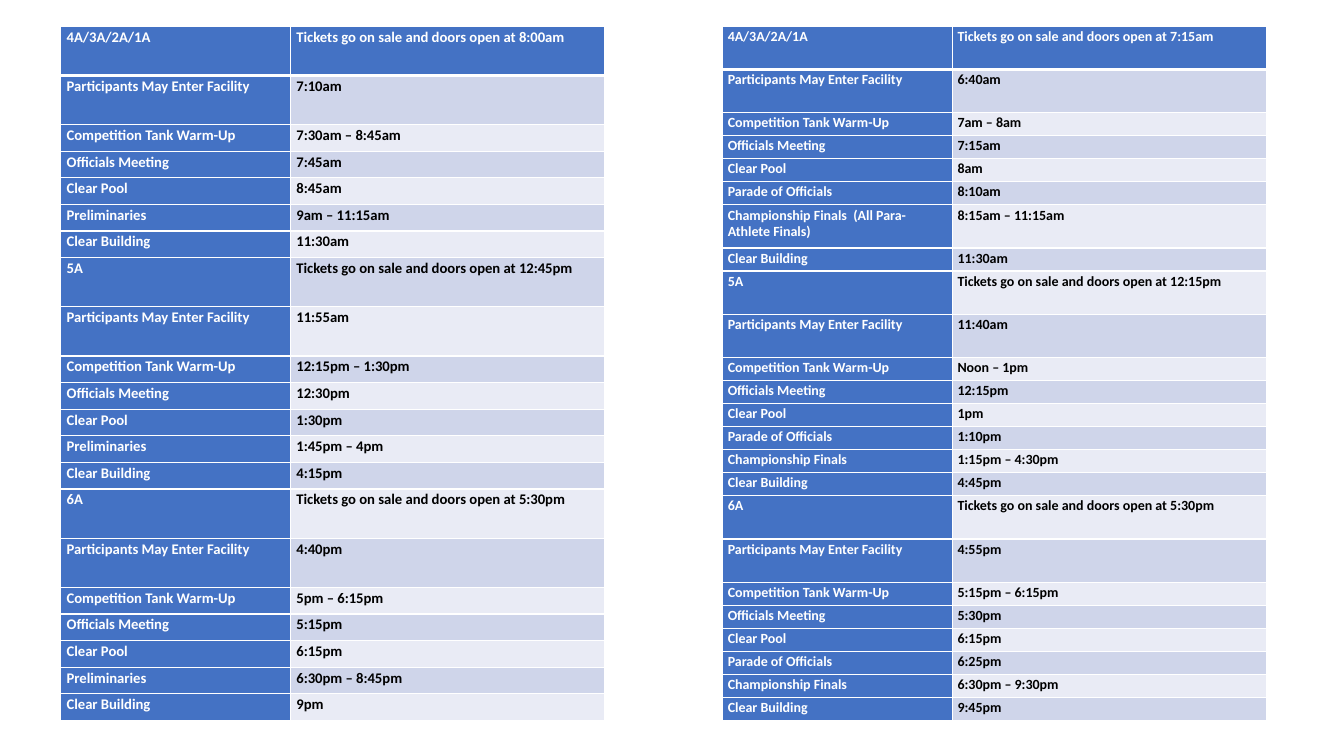
"""Build a slide with two swim meet schedules set side by side as tables."""
from dataclasses import dataclass

from lxml import etree
from pptx import Presentation
from pptx.dml.color import RGBColor
from pptx.enum.text import MSO_ANCHOR
from pptx.oxml.ns import qn
from pptx.slide import Slide
from pptx.table import _Cell
from pptx.util import Cm, Pt

ANCHOR_TOP = MSO_ANCHOR.TOP
BLANK_LAYOUT = 6
ENTRY = "Participants May Enter Facility"
TICKETS = "Tickets go on sale and doors open at "
FINALS = "Championship Finals"
OPENING_STEPS = (ENTRY, "Competition Tank Warm-Up", "Officials Meeting", "Clear Pool")
PRELIMINARY_STEPS = (*OPENING_STEPS, "Preliminaries", "Clear Building")
FINALS_STEPS = (*OPENING_STEPS, "Parade of Officials", FINALS, "Clear Building")


@dataclass(frozen=True)
class Theme:
    """Colours, font and line widths of the slide."""
    font: str = "Calibri"
    accent: str = "4472C4"
    dark_band: str = "CFD5EA"
    light_band: str = "E9EBF5"
    border: str = "FFFFFF"
    label_text: str = "FFFFFF"
    time_text: str = "000000"
    preliminary_size: float = 10.5
    finals_size: float = 10
    thin_line: int = 1
    thick_line: int = 3


THEME = Theme()


@dataclass(frozen=True)
class Session:
    """One division's ticket time and the times of its steps."""
    division: str
    doors_open: str
    times: tuple[str, ...]
    finals_note: str = ""


@dataclass(frozen=True)
class Row:
    """One table row."""
    label: str
    time: str
    tall: bool


@dataclass(frozen=True)
class Schedule:
    """One table with its place and measures in centimetres."""
    left: float
    short_row: float
    tall_row: float
    side_margin: float
    text_size: float
    steps: tuple[str, ...]
    sessions: tuple[Session, ...]
    top: float = 0.66
    columns: tuple[float, float] = (5.79, 7.92)


SCHEDULES = (
    Schedule(1.53, 0.67, 1.24, 0.15, THEME.preliminary_size, PRELIMINARY_STEPS, (
        Session("4A/3A/2A/1A", "8:00am", (
            "7:10am", "7:30am – 8:45am", "7:45am", "8:45am", "9am – 11:15am", "11:30am")),
        Session("5A", "12:45pm", (
            "11:55am", "12:15pm – 1:30pm", "12:30pm", "1:30pm", "1:45pm – 4pm", "4:15pm")),
        Session("6A", "5:30pm", (
            "4:40pm", "5pm – 6:15pm", "5:15pm", "6:15pm", "6:30pm – 8:45pm", "9pm")),
    )),
    Schedule(18.21, 0.58, 1.09, 0.13, THEME.finals_size, FINALS_STEPS, (
        Session("4A/3A/2A/1A", "7:15am", (
            "6:40am", "7am – 8am", "7:15am", "8am", "8:10am", "8:15am – 11:15am", "11:30am"),
            "  (All Para-Athlete Finals)"),
        Session("5A", "12:15pm", (
            "11:40am", "Noon – 1pm", "12:15pm", "1pm", "1:10pm", "1:15pm – 4:30pm", "4:45pm")),
        Session("6A", "5:30pm", (
            "4:55pm", "5:15pm – 6:15pm", "5:30pm", "6:15pm", "6:25pm", "6:30pm – 9:30pm",
            "9:45pm")),
    )),
)


def schedule_rows(schedule: Schedule) -> list[Row]:
    """List the rows of every session in order."""
    rows = []
    for session in schedule.sessions:
        rows.append(Row(session.division, TICKETS + session.doors_open, True))
        for step, time in zip(schedule.steps, session.times):
            note = session.finals_note if step == FINALS else ""
            rows.append(Row(step + note, time, step == ENTRY or bool(note)))
    return rows


def draw_borders(cell: _Cell, row_index: int) -> None:
    """Draw the cell's borders, thick between the header and the rows below."""
    properties = cell._tc.get_or_add_tcPr()
    thick_side = {0: "lnB", 1: "lnT"}.get(row_index)
    for side in ("lnL", "lnR", "lnT", "lnB"):
        width = THEME.thick_line if side == thick_side else THEME.thin_line
        line = etree.SubElement(properties, qn(f"a:{side}"), w=str(Pt(width)))
        fill = etree.SubElement(line, qn("a:solidFill"))
        etree.SubElement(fill, qn("a:srgbClr"), val=THEME.border)


def fill_cell(cell: _Cell, text: str, fill: str, colour: str, schedule: Schedule) -> None:
    """Write the cell's text and set its format."""
    cell.fill.solid()
    cell.fill.fore_color.rgb = RGBColor.from_string(fill)
    cell.margin_left = cell.margin_right = Cm(schedule.side_margin)
    cell.margin_top, cell.margin_bottom = Cm(0.05), Cm(0)
    cell.vertical_anchor = ANCHOR_TOP
    cell.text_frame.text = text
    for span in cell.text_frame.paragraphs[0].runs:
        span.font.name = THEME.font
        span.font.size = Pt(schedule.text_size)
        span.font.bold = True
        span.font.color.rgb = RGBColor.from_string(colour)


def draw_schedule(page: Slide, schedule: Schedule) -> None:
    """Add one schedule table to the page."""
    rows = schedule_rows(schedule)
    heights = [schedule.tall_row if row.tall else schedule.short_row for row in rows]
    table = page.shapes.add_table(
        len(rows), len(schedule.columns), Cm(schedule.left), Cm(schedule.top),
        Cm(sum(schedule.columns)), Cm(sum(heights))).table
    for column, width in zip(table.columns, schedule.columns):
        column.width = Cm(width)
    for index, (row, height) in enumerate(zip(rows, heights)):
        table.rows[index].height = Cm(height)
        band = THEME.dark_band if index % 2 else THEME.light_band
        time_fill, time_colour = (
            (band, THEME.time_text) if index else (THEME.accent, THEME.label_text))
        label_cell, time_cell = table.cell(index, 0), table.cell(index, 1)
        for cell in (label_cell, time_cell):
            draw_borders(cell, index)
        fill_cell(label_cell, row.label, THEME.accent, THEME.label_text, schedule)
        fill_cell(time_cell, row.time, time_fill, time_colour, schedule)


def main() -> None:
    """Build and save the deck."""
    deck = Presentation()
    deck.slide_width, deck.slide_height = Cm(33.87), Cm(19.05)
    page = deck.slides.add_slide(deck.slide_layouts[BLANK_LAYOUT])
    for schedule in SCHEDULES:
        draw_schedule(page, schedule)
    deck.save("out.pptx")


if __name__ == "__main__":
    main()
